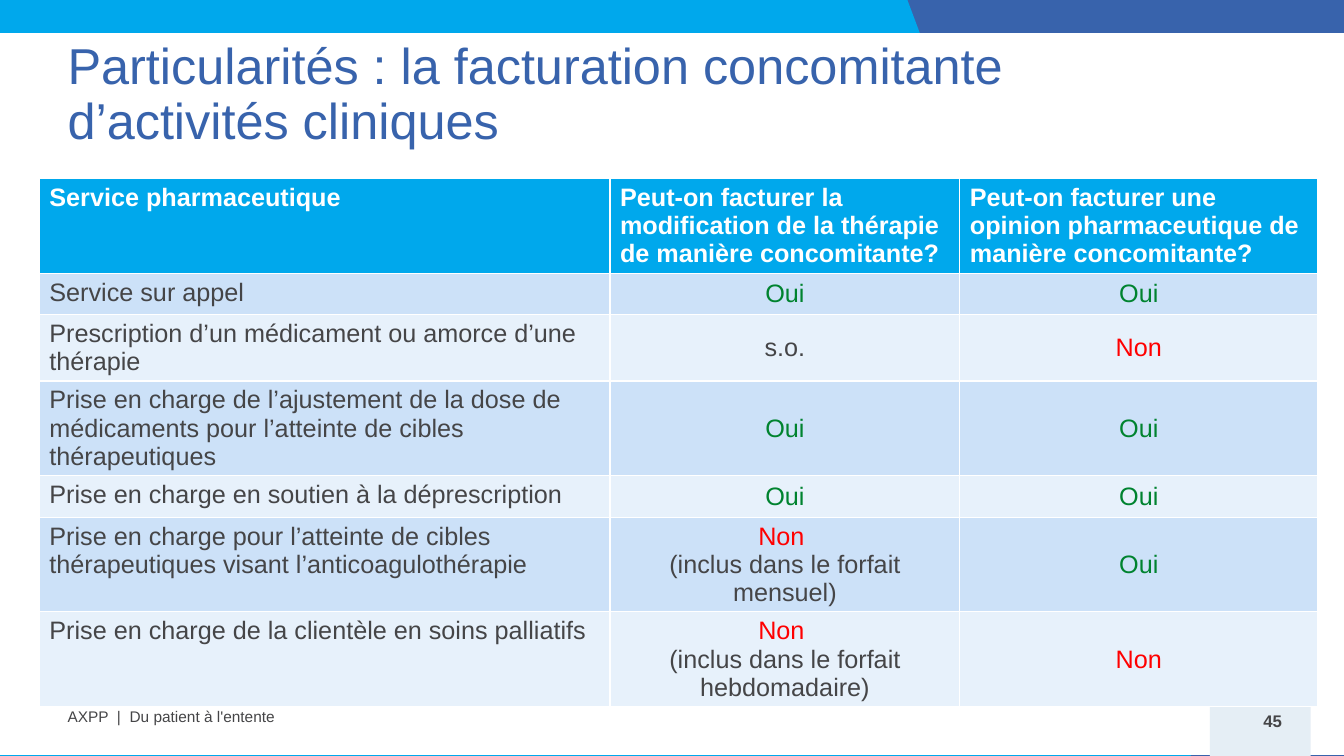
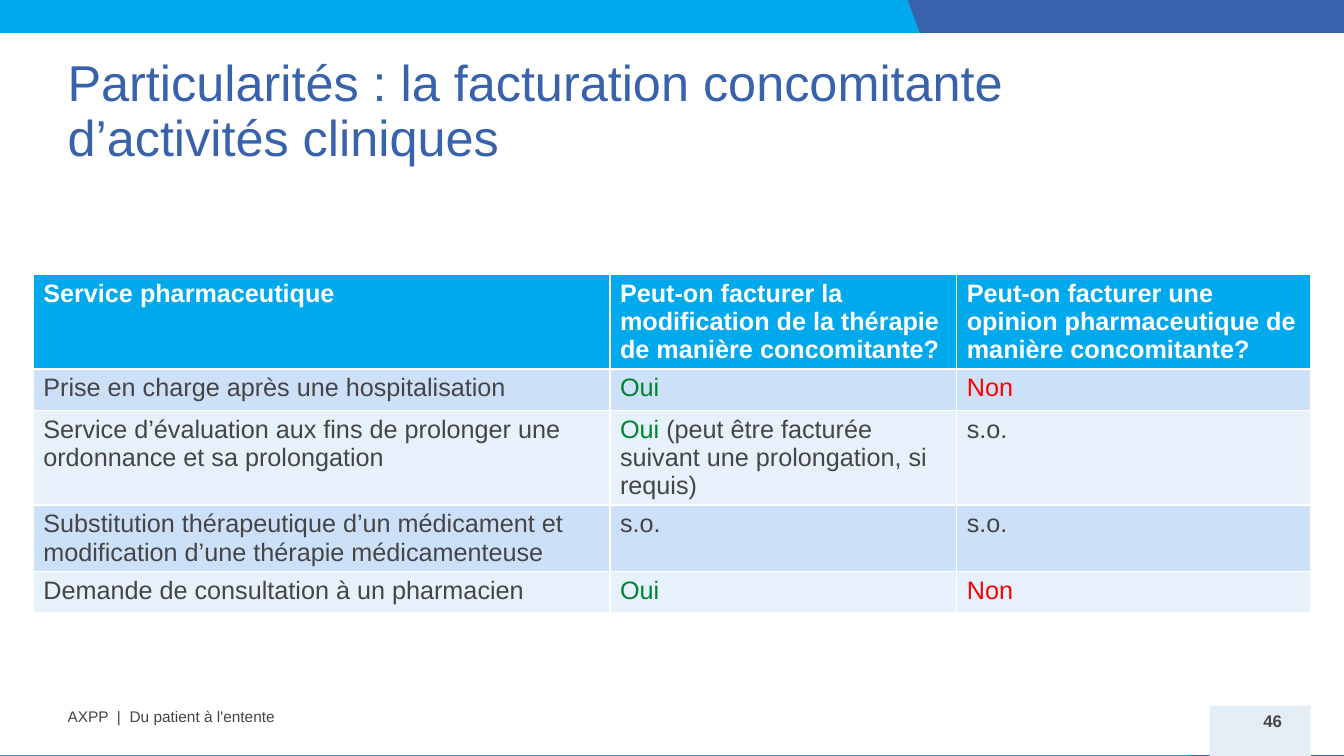
import pptx
import pptx.util
import pptx.dml.color
import pptx.enum.shapes
import pptx.enum.text

Inches, Pt = pptx.util.Inches, pptx.util.Pt
ALIGN, ANCHOR = pptx.enum.text.PP_ALIGN, pptx.enum.text.MSO_ANCHOR
HUES = {
    "blue": "3863AC", "cyan": "00A8EC", "white": "FFFFFF", "tab": "E5EEF5",
    "text": "454547", "dark": "CCE1F8", "light": "E7F1FB",
    "Oui": "00832F", "Non": "FF0000",
}
FONT = "Arial"
TITLE = "Particularités : la facturation concomitante d’activités cliniques"
FOOTER = "AXPP  | \u00a0Du patient à l'entente".replace("\u00a0", chr(160))
HEAD = [
    "Service pharmaceutique",
    "Peut-on facturer la modification de la thérapie de manière concomitante?",
    "Peut-on facturer une opinion pharmaceutique de manière concomitante?",
]
PAGES = [
    {
        "number": 45, "title": (0.41, 10.36), "table": (0.39, 1.77),
        "cols": [5.66, 3.47, 3.55], "centred": True,
        "rows": [
            ["Service sur appel", "Oui", "Oui"],
            ["Prescription d’un médicament ou amorce d’une thérapie", "s.o.", "Non"],
            ["Prise en charge de l’ajustement de la dose de médicaments "
             "pour l’atteinte de cibles thérapeutiques", "Oui", "Oui"],
            ["Prise en charge en soutien à la déprescription", "Oui", "Oui"],
            ["Prise en charge pour l’atteinte de cibles thérapeutiques "
             "visant l’anticoagulothérapie",
             "Non \n(inclus dans le forfait mensuel)", "Oui"],
            ["Prise en charge de la clientèle en soins palliatifs",
             "Non \n(inclus dans le forfait hebdomadaire)", "Non"],
        ],
    },
    {
        "number": 46, "title": (0.58, 10.68), "table": (0.33, 2.72),
        "cols": [5.72, 3.44, 3.51], "centred": False,
        "rows": [
            ["Prise en charge après une hospitalisation", "Oui", "Non"],
            ["Service d’évaluation aux fins de prolonger une ordonnance et sa prolongation",
             "Oui (peut être facturée suivant une prolongation, si requis)", "s.o."],
            ["Substitution thérapeutique d’un médicament et modification "
             "d’une thérapie médicamenteuse", "s.o.", "s.o."],
            ["Demande de consultation à un pharmacien", "Oui", "Non"],
        ],
    },
]


def tint(hue):
    return pptx.dml.color.RGBColor.from_string(HUES[hue])


def write(shape, text, size, hue, bold=False, line=None, anchor=ANCHOR.TOP):
    """Put one left-aligned paragraph in a frame without margins."""
    frame = shape.text_frame
    frame.word_wrap = True
    frame.auto_size = pptx.enum.text.MSO_AUTO_SIZE.NONE
    frame.vertical_anchor = anchor
    frame.margin_left = frame.margin_right = frame.margin_top = frame.margin_bottom = 0
    para = frame.paragraphs[0]
    para.text = text
    para.alignment = ALIGN.LEFT
    para.line_spacing = line
    para.font.name, para.font.size, para.font.bold = FONT, Pt(size), bold
    para.font.color.rgb = tint(hue)


deck = pptx.Presentation()
deck.slide_width, deck.slide_height = Inches(13.33), Inches(7.5)
layout = deck.slide_layouts[5]
for holder in list(layout.placeholders):
    if holder.placeholder_format.idx != 0:
        holder.element.getparent().remove(holder.element)
layout.background.fill.solid()
layout.background.fill.fore_color.rgb = tint("blue")
slides = [deck.slides.add_slide(layout) for page in PAGES]

# Bands and page tab: drawn once, then moved to the shared layout
curve = [(12.59, 6.83), (12.44, 6.83), (12.33, 6.92), (12.26, 7.06)]
steps = 12
bend = []
for step in range(steps + 1):
    t = step / steps
    parts = [(1 - t) ** 3, 3 * t * (1 - t) ** 2, 3 * t ** 2 * (1 - t), t ** 3]
    bend.append(tuple(sum(w * p[axis] for w, p in zip(parts, curve)) for axis in (0, 1)))
outlines = [
    ("cyan", [(0, 7.5), (0, 0), (8.73, 0), (12.43, 7.5)]),
    ("white", None),
    ("tab", [(13.33, 6.83), *bend, (12.04, 7.5), (13.33, 7.5)]),
]
shapes = slides[0].shapes
for hue, points in outlines:
    if points:
        pen = shapes.build_freeform(*points[0], scale=Inches(1))
        pen.add_line_segments(points[1:], close=True)
        band = pen.convert_to_shape()
    else:
        band = shapes.add_shape(pptx.enum.shapes.MSO_SHAPE.RECTANGLE,
                                0, Inches(0.33), Inches(13.33), Inches(7.16))
    band.shadow.inherit = False
    band.fill.solid()
    band.fill.fore_color.rgb = tint(hue)
    band.line.fill.background()
    layout.shapes.element.append(band.element)

for slide, page in zip(slides, PAGES):
    shapes = slide.shapes
    top, width = page["title"]
    title = shapes.title
    title.left, title.top = Inches(0.67), Inches(top)
    title.width, title.height = Inches(width), Inches(1.45)
    write(title, TITLE, 36, "blue", line=0.9)
    footer = shapes.add_textbox(Inches(0.67), Inches(6.92), Inches(10.5), Inches(0.4))
    write(footer, FOOTER, 11, "text", line=0.9, anchor=ANCHOR.MIDDLE)
    number = shapes.add_textbox(Inches(12.53), Inches(7.05), Inches(0.8), Inches(0.4))
    write(number, str(page["number"]), 12, "text", bold=True)

    rows = [HEAD] + page["rows"]
    left, top = page["table"]
    table = shapes.add_table(len(rows), len(HEAD), Inches(left), Inches(top),
                             Inches(sum(page["cols"])), Inches(0.41 * len(rows))).table
    for col, width in zip(table.columns, page["cols"]):
        col.width = Inches(width)
    for r, row in enumerate(rows):
        head = r == 0
        for c, text in enumerate(row):
            cell = table.cell(r, c)
            cell.fill.solid()
            cell.fill.fore_color.rgb = tint("cyan" if head else "dark" if r % 2 else "light")
            centred = page["centred"] and not head and c > 0
            if centred:
                cell.vertical_anchor = ANCHOR.MIDDLE
            for n, line in enumerate(text.split("\n")):
                para = cell.text_frame.paragraphs[0] if n == 0 else cell.text_frame.add_paragraph()
                para.alignment = ALIGN.CENTER if centred else ALIGN.LEFT
                para.font.name, para.font.size, para.font.bold = FONT, Pt(18), head
                word, gap, rest = line.partition(" ")
                base = "white" if head else "text"
                runs = [(word + gap, word), (rest, base)] if word in ("Oui", "Non") else [(line, base)]
                for part, hue in runs:
                    if part:
                        run = para.add_run()
                        run.text = part
                        run.font.color.rgb = tint(hue)

deck.save("out.pptx")
